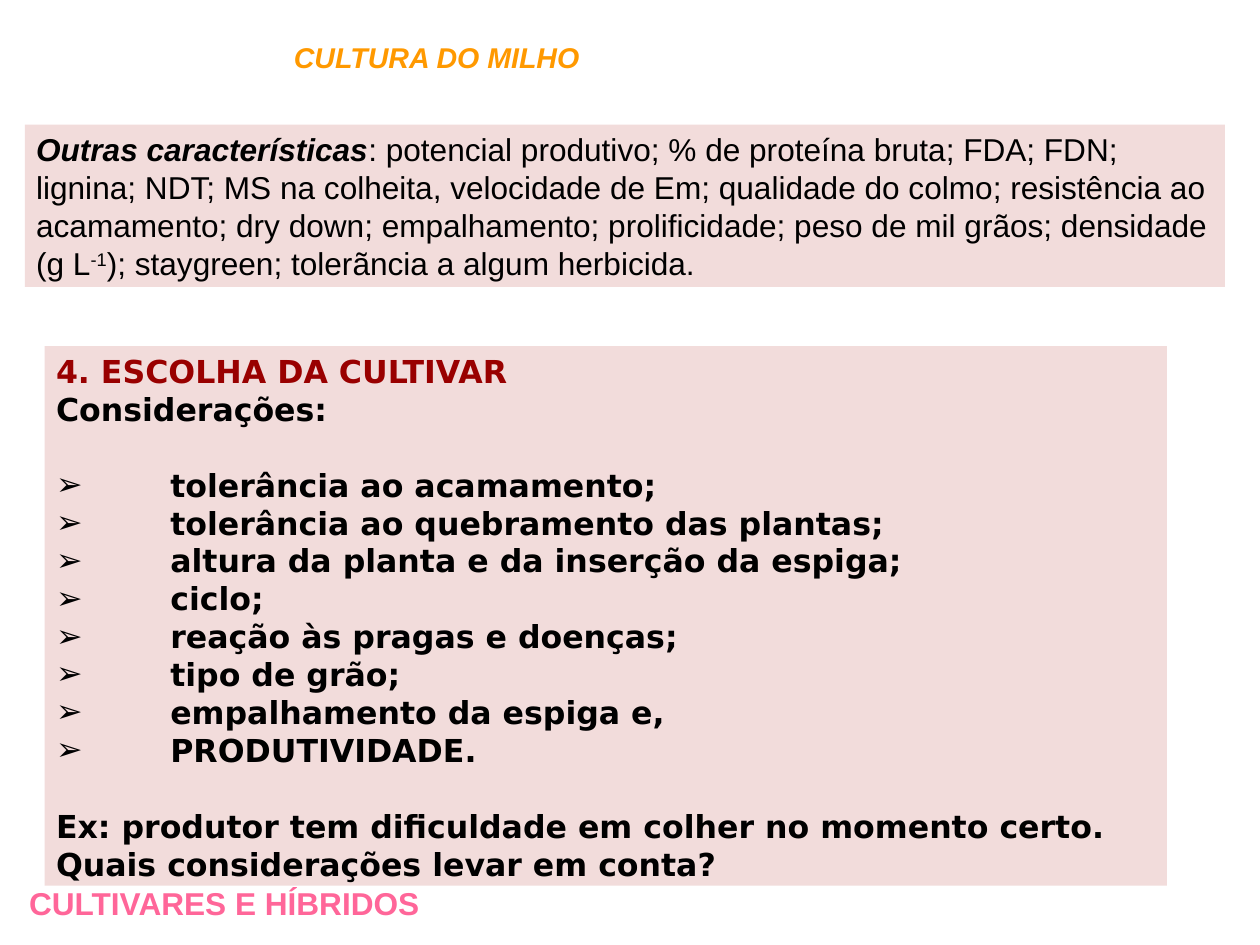
from lxml.etree import SubElement
from pptx import Presentation
from pptx.dml.color import RGBColor
from pptx.enum.text import MSO_ANCHOR, MSO_AUTO_SIZE, PP_ALIGN
from pptx.oxml.ns import qn
from pptx.util import Cm, Inches, Pt

TOP, MID = MSO_ANCHOR.TOP, MSO_ANCHOR.MIDDLE
LEFT, FIXED = PP_ALIGN.LEFT, MSO_AUTO_SIZE.NONE

# Content
TITLE = "CULTURA DO MILHO"
HEAD = "4. ESCOLHA DA CULTIVAR"
LEAD = "Considerações:"
ITEMS = [
    "tolerância ao acamamento;",
    "tolerância ao quebramento das plantas;",
    "altura da planta e da inserção da espiga;",
    "ciclo;",
    "reação às pragas e doenças;",
    "tipo de grão;",
    "empalhamento da espiga e,",
    "PRODUTIVIDADE.",
]
CASE = ("Ex: produtor tem dificuldade em colher no momento certo. "
        "Quais considerações levar em conta?")
FOOT = "CULTIVARES E HÍBRIDOS"
TRAITS = [  # text, style
    ("Outras características", "strong"),
    (": potencial produtivo; % de proteína bruta; FDA; FDN; lignina; NDT; "
     "MS na colheita, velocidade de Em; qualidade do colmo; resistência ao "
     "acamamento; dry down; empalhamento; prolificidade; peso de mil grãos; "
     "densidade (g L", "plain"),
    ("-1", "super"),
    ("); staygreen; tolerãncia a algum herbicida.", "plain"),
]

# Places: left, top, width, height in percent of the slide
AREAS = {
    "title": (23.32, 1.09, 65.79, 9.92),
    "list": (3.54, 36.64, 89.08, 57.07),
    "foot": (1.42, 92.99, 33.3, 5.2),
    "traits": (1.97, 13.2, 95.24, 17.17),
}


class Theme:
    sans, wide = "Arial", "DejaVu Sans"
    small, text, pitch = Pt(18), Pt(19.9), Pt(23.88)
    orange = RGBColor(0xFF, 0x99, 0x00)
    red = RGBColor(0x99, 0x00, 0x00)
    pink = RGBColor(0xFF, 0x66, 0x99)
    black = RGBColor(0, 0, 0)
    panel = RGBColor(0xF2, 0xDC, 0xDB)


deck = Presentation()
deck.slide_width, deck.slide_height = Cm(28), Cm(21)
slide = deck.slides.add_slide(deck.slide_layouts[1])


def area(name):
    sides = (deck.slide_width, deck.slide_height) * 2
    return [round(part * side / 100) for part, side in zip(AREAS[name], sides)]


def setup(shape, anchor=TOP, pad=(0.1, 0.05), fill=None):
    frame = shape.text_frame
    frame.word_wrap, frame.auto_size = True, FIXED
    frame.vertical_anchor = anchor
    frame.margin_left = frame.margin_right = Inches(pad[0])
    frame.margin_top = frame.margin_bottom = Inches(pad[1])
    if fill is not None:
        shape.fill.solid()
        shape.fill.fore_color.rgb = fill
    return frame


def place(shape, name):
    shape.left, shape.top, shape.width, shape.height = area(name)
    return shape


def style(para, face, color, size=Theme.text, bold=True, italic=False):
    para.alignment = LEFT
    font = para.font
    font.name, font.size, font.color.rgb = face, size, color
    font.bold, font.italic = bold, italic


def bullet(para, mark=None, hang=0):
    props = para._p.get_or_add_pPr()
    props.set("marL", str(Inches(hang)))
    props.set("indent", str(-Inches(hang)))
    if mark:
        SubElement(props, qn("a:buChar")).set("char", mark)
    else:
        SubElement(props, qn("a:buNone"))


# Title
frame = setup(place(slide.shapes.title, "title"), MID, (0, 0))
frame.text = TITLE
style(frame.paragraphs[0], Theme.sans, Theme.orange, Theme.small, italic=True)

# List of considerations
frame = setup(place(slide.placeholders[1], "list"), fill=Theme.panel)
lines = [HEAD, LEAD, *ITEMS, CASE]
frame.text = "\n".join(lines)
for line, para in zip(lines, frame.paragraphs):
    if line in ITEMS:
        bullet(para, "➢", 1)
    else:
        bullet(para)
    para.line_spacing = Theme.pitch
    para.space_before = Theme.pitch if line in (ITEMS[0], CASE) else Pt(0)
    style(para, Theme.wide, Theme.red if line == HEAD else Theme.black)

# Footer label
frame = setup(slide.shapes.add_textbox(*area("foot")), MID)
frame.text = FOOT
style(frame.paragraphs[0], Theme.sans, Theme.pink)

# Other traits
frame = setup(slide.shapes.add_textbox(*area("traits")), fill=Theme.panel)
para = frame.paragraphs[0]
para.line_spacing = Theme.pitch
style(para, Theme.sans, Theme.black, bold=False)
for words, kind in TRAITS:
    run = para.add_run()
    run.text = words
    if kind == "strong":
        run.font.bold = run.font.italic = True
    elif kind == "super":
        run._r.get_or_add_rPr().set("baseline", "30000")

deck.save("out.pptx")
